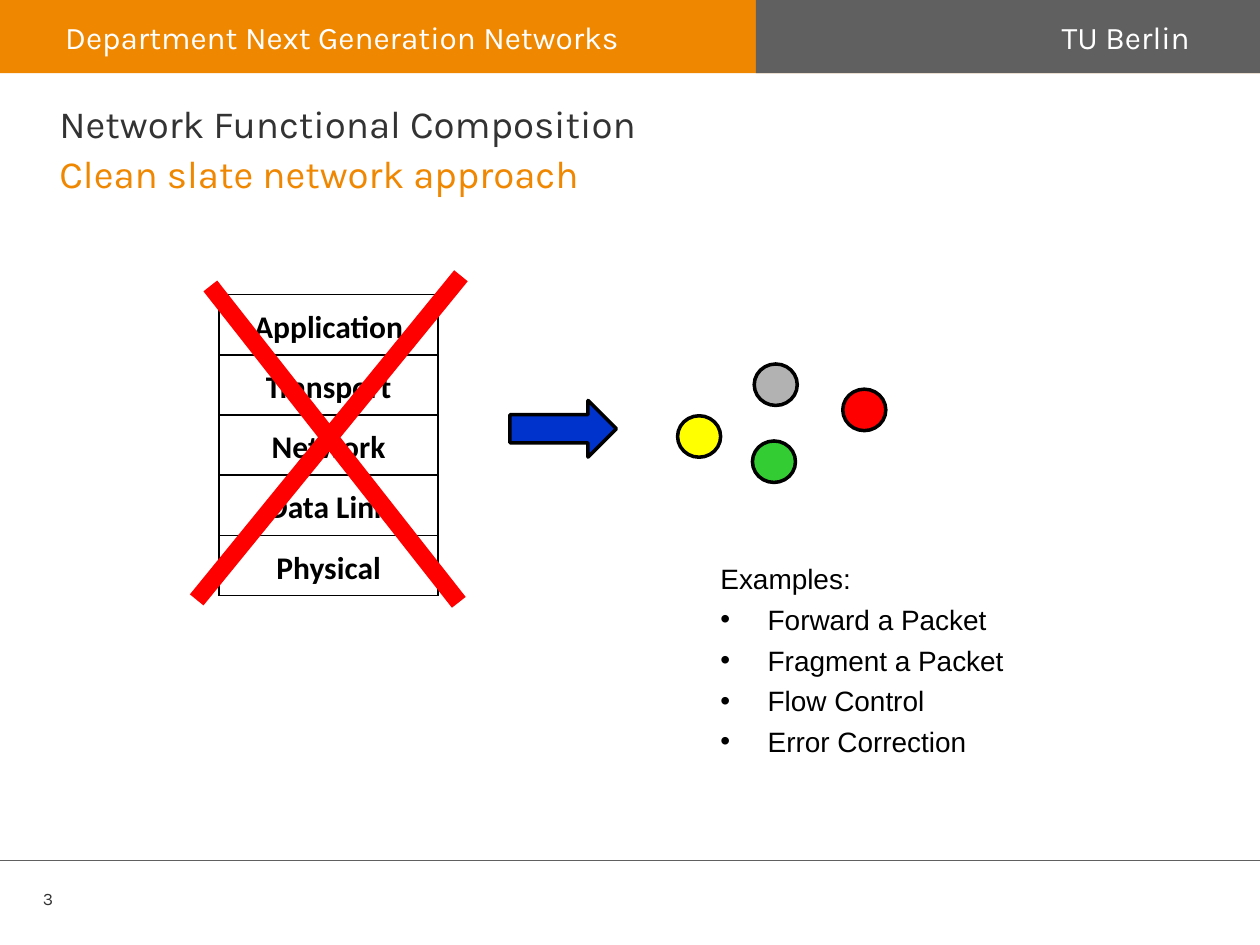
from dataclasses import dataclass

from lxml import etree
from pptx import Presentation
from pptx.dml.color import RGBColor
from pptx.enum.shapes import MSO_CONNECTOR, MSO_SHAPE
from pptx.enum.text import MSO_ANCHOR, MSO_AUTO_SIZE, PP_ALIGN
from pptx.oxml.ns import qn
from pptx.util import Pt

RECTANGLE = MSO_SHAPE.RECTANGLE
OVAL = MSO_SHAPE.OVAL
RIGHT_ARROW = MSO_SHAPE.RIGHT_ARROW
STRAIGHT = MSO_CONNECTOR.STRAIGHT
TOP, MIDDLE = MSO_ANCHOR.TOP, MSO_ANCHOR.MIDDLE
LEFT, CENTER, RIGHT = PP_ALIGN.LEFT, PP_ALIGN.CENTER, PP_ALIGN.RIGHT
GROW, FIXED = MSO_AUTO_SIZE.SHAPE_TO_FIT_TEXT, MSO_AUTO_SIZE.NONE

WIDTH, HEIGHT = 720, 540
ORANGE, GREY, DARK = "F08700", "606060", "333333"
BLACK, WHITE, RED = "000000", "FFFFFF", "FF0000"
BULLET_INDENT = 27
LAYERS = ["Application", "Transport", "Network", "Data Link", "Physical"]
EXAMPLES = ["Forward a Packet", "Fragment a Packet", "Flow Control", "Error Correction"]


@dataclass
class Box:
    left: float
    top: float
    width: float
    height: float

    def lengths(self) -> list:
        return [Pt(n) for n in (self.left, self.top, self.width, self.height)]


@dataclass
class Figure:
    kind: MSO_SHAPE
    box: Box
    fill: str
    outline: float = 0


@dataclass
class Stroke:
    start: tuple[float, float]
    end: tuple[float, float]
    color: str
    width: float


@dataclass
class Label:
    box: Box
    lines: list[str]
    size: float
    color: str
    font: str = "Karla"
    align: PP_ALIGN = LEFT
    anchor: MSO_ANCHOR = TOP
    margins: tuple[float, float, float, float] = (0, 0, 0, 0)
    auto_size: MSO_AUTO_SIZE = FIXED
    wrap: bool = True


def rgb(color: str) -> RGBColor:
    return RGBColor.from_string(color)


def set_attributes(target, values: dict) -> None:
    for name, value in values.items():
        setattr(target, name, value)


def set_font(paragraph, name: str, size: float, color: str, bold: bool = False) -> None:
    set_attributes(paragraph.font, {"name": name, "size": Pt(size), "bold": bold})
    paragraph.font.color.rgb = rgb(color)


def add_bullet(paragraph) -> None:
    properties = paragraph._p.get_or_add_pPr()
    properties.set("marL", str(Pt(BULLET_INDENT)))
    properties.set("indent", str(-Pt(BULLET_INDENT)))
    etree.SubElement(properties, qn("a:buFont"), typeface="Arial")
    etree.SubElement(properties, qn("a:buChar"), char="•")


def draw_figure(slide, figure: Figure) -> None:
    shape = slide.shapes.add_shape(figure.kind, *figure.box.lengths())
    shape.shadow.inherit = False
    shape.fill.solid()
    shape.fill.fore_color.rgb = rgb(figure.fill)
    if figure.outline:
        shape.line.color.rgb = rgb(BLACK)
        shape.line.width = Pt(figure.outline)
    else:
        shape.line.fill.background()


def draw_stroke(slide, stroke: Stroke) -> None:
    points = [Pt(n) for n in stroke.start + stroke.end]
    connector = slide.shapes.add_connector(STRAIGHT, *points)
    connector.line.color.rgb = rgb(stroke.color)
    connector.line.width = Pt(stroke.width)
    etree.SubElement(connector._element.spPr, qn("a:effectLst"))


def draw_label(slide, label: Label) -> None:
    """The first line is plain; any further lines are bulleted."""
    frame = slide.shapes.add_textbox(*label.box.lengths()).text_frame
    left, top, right, bottom = (Pt(n) for n in label.margins)
    set_attributes(frame, {
        "word_wrap": label.wrap, "auto_size": label.auto_size,
        "vertical_anchor": label.anchor, "margin_left": left,
        "margin_top": top, "margin_right": right, "margin_bottom": bottom,
    })
    for index, text in enumerate(label.lines):
        paragraph = frame.add_paragraph() if index else frame.paragraphs[0]
        paragraph.text = text
        paragraph.alignment = label.align
        if index:
            paragraph.space_before = Pt(4)
            add_bullet(paragraph)
        set_font(paragraph, label.font, label.size, label.color)


def set_borders(cell, color: str, width: float) -> None:
    properties = cell._tc.get_or_add_tcPr()
    for index, side in enumerate(("a:lnL", "a:lnR", "a:lnT", "a:lnB")):
        line = etree.Element(qn(side), w=str(Pt(width)))
        fill = etree.SubElement(line, qn("a:solidFill"))
        etree.SubElement(fill, qn("a:srgbClr"), val=color)
        properties.insert(index, line)


def draw_layers(slide, box: Box, names: list[str]) -> None:
    table = slide.shapes.add_table(len(names), 1, *box.lengths()).table
    set_attributes(table, {"first_row": False, "horz_banding": False})
    for row, name in enumerate(names):
        table.rows[row].height = Pt(box.height / len(names))
        cell = table.cell(row, 0)
        cell.fill.background()
        set_attributes(cell, {
            "text": name, "vertical_anchor": MIDDLE, "margin_left": Pt(5),
            "margin_right": Pt(5), "margin_top": 0, "margin_bottom": 0,
        })
        paragraph = cell.text_frame.paragraphs[0]
        set_attributes(paragraph, {"alignment": CENTER, "line_spacing": 1.15})
        set_font(paragraph, "Calibri", 18, BLACK, bold=True)
        set_borders(cell, BLACK, 1)


def main() -> None:
    presentation = Presentation()
    set_attributes(presentation, {"slide_width": Pt(WIDTH), "slide_height": Pt(HEIGHT)})
    slide = presentation.slides.add_slide(presentation.slide_layouts[6])
    padding = (7.2, 3.6, 7.2, 3.6)

    # Header bars and footer rule
    draw_figure(slide, Figure(RECTANGLE, Box(0, 0, WIDTH, 41.8), ORANGE))
    draw_figure(slide, Figure(RECTANGLE, Box(432, 0, 288, 41.8), GREY))
    draw_stroke(slide, Stroke((0, 491.8), (WIDTH, 491.8), GREY, 0.5))

    # Page number, header texts, headings
    for label in (
        Label(Box(24.5, 504.7, 325.4, 17.3), ["3"], 10, DARK, anchor=MIDDLE),
        Label(Box(440, 6.5, 247, 28.8), ["TU Berlin"], 18, WHITE, align=RIGHT,
              margins=padding, auto_size=GROW),
        Label(Box(30.2, 6.5, 373, 28.8), ["Department Next Generation Networks"],
              18, WHITE, margins=padding, auto_size=GROW),
        Label(Box(34, 57, 652, 28.8), ["Network Functional Composition"], 22, DARK),
        Label(Box(34, 85.8, 652, 31), ["Clean slate network approach"], 22, ORANGE),
    ):
        draw_label(slide, label)

    # Loose functional blocks and the arrow towards them
    for left, top, color in (
        (387.2, 237.6, "FFFF00"), (430, 252, "33CC33"),
        (431, 208, "B2B2B2"), (481.6, 222.4, RED),
    ):
        draw_figure(slide, Figure(OVAL, Box(left, top, 24.6, 23.7), color, 2))
    draw_figure(slide, Figure(RIGHT_ARROW, Box(291.4, 228.8, 60.8, 32.4), "0033CC", 2))

    # Layer stack, crossed out
    draw_layers(slide, Box(125.2, 168.4, 125.2, 172), LAYERS)
    draw_stroke(slide, Stroke((112.4, 342.8), (263.4, 157.6), RED, 10))
    draw_stroke(slide, Stroke((262.2, 344.2), (120.2, 163.4), RED, 10))

    # Examples of functions
    draw_label(slide, Label(Box(404.6, 317.6, 178.6, 119.5), ["Examples:"] + EXAMPLES,
                            16, BLACK, font="Arial", margins=padding,
                            auto_size=GROW, wrap=False))

    presentation.save("out.pptx")


if __name__ == "__main__":
    main()
